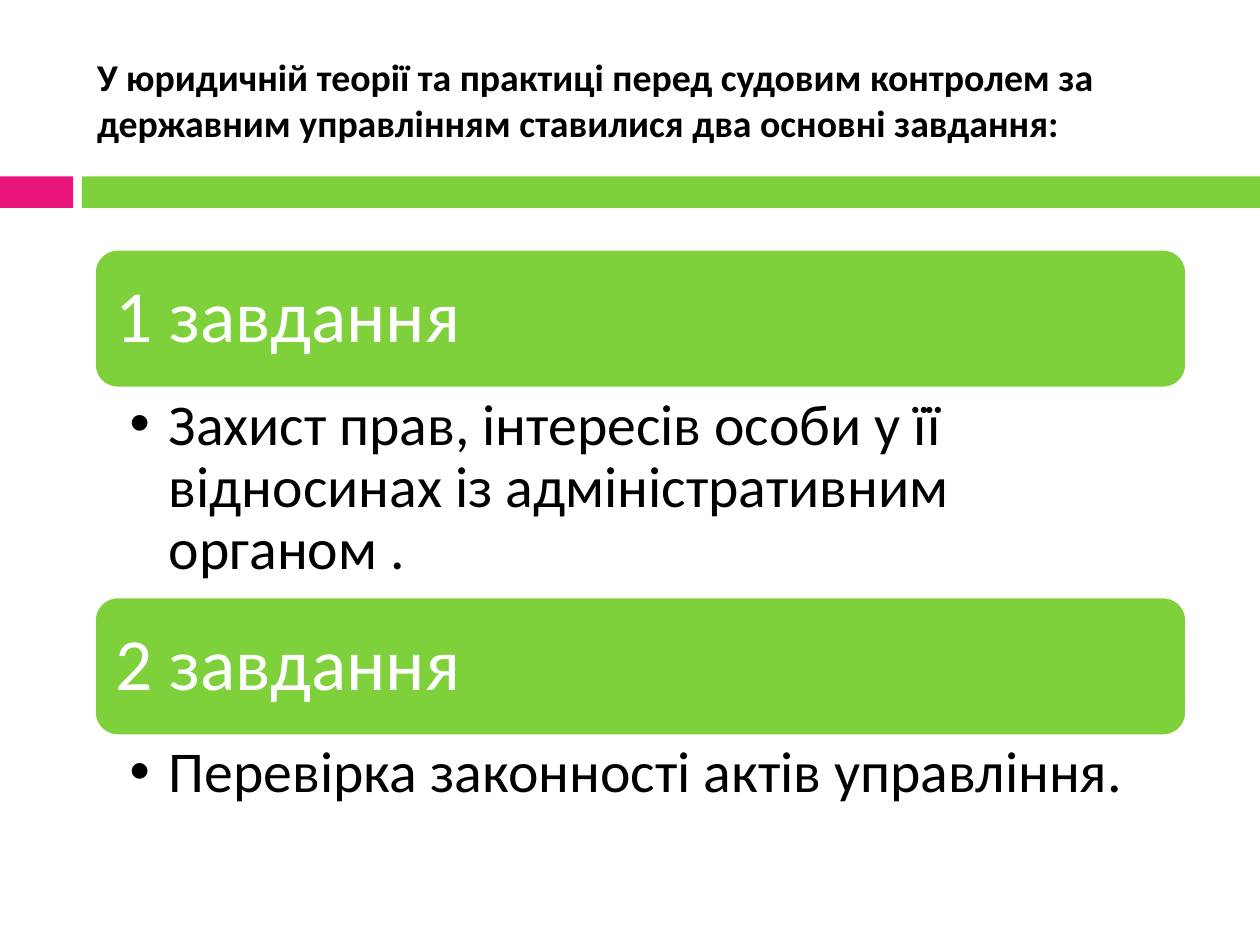
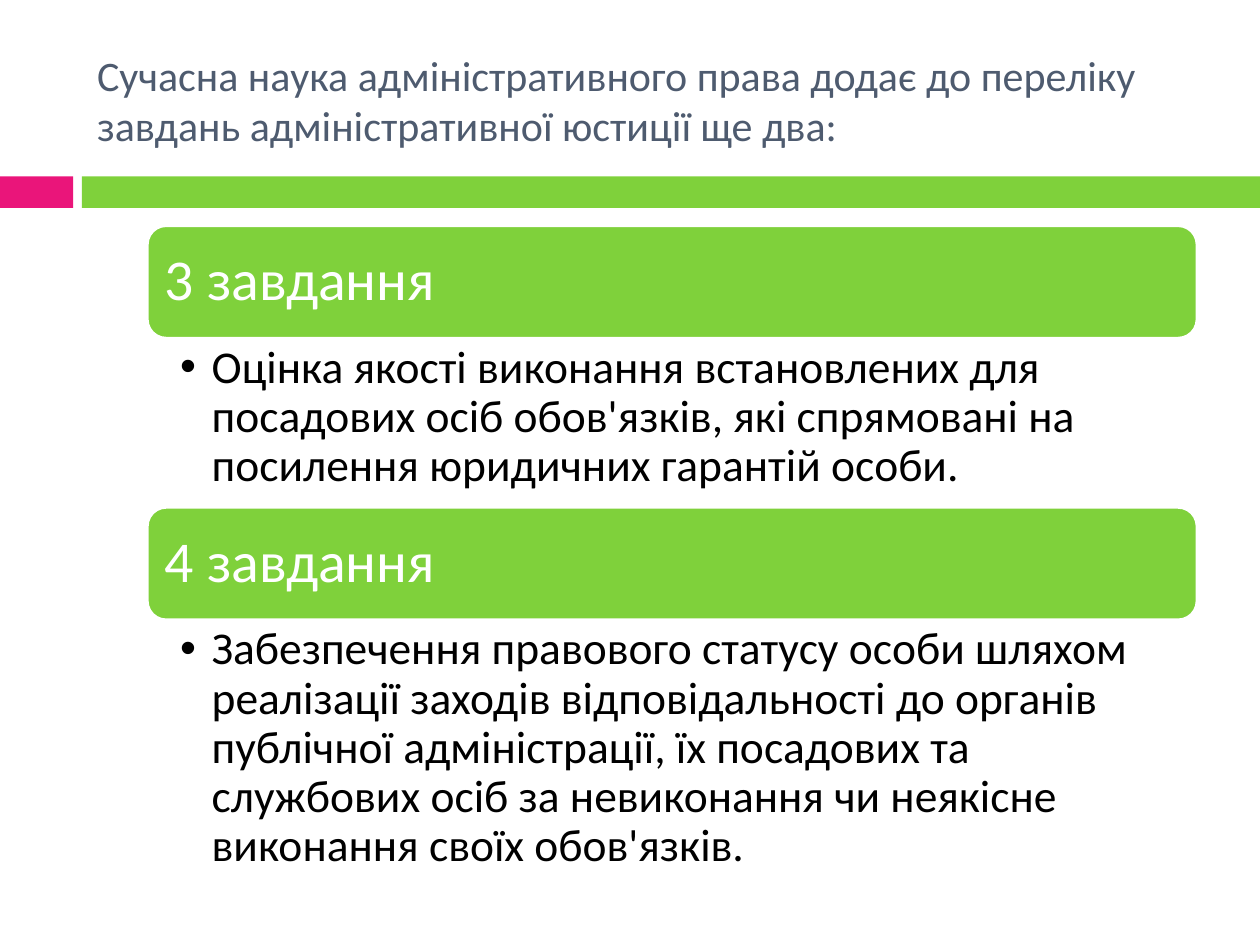
from lxml import etree
from pptx import Presentation
from pptx.dml.color import RGBColor
from pptx.enum import shapes, text
from pptx.oxml.ns import qn
from pptx.util import Pt

FONT = "Calibri"
GREEN, PINK, WHITE, BLACK, SLATE = "7FD13B", "EA157A", "FFFFFF", "000000", "4E5B6F"
SLIDE_WIDTH, SLIDE_HEIGHT = 720, 540
TITLE_BOX = (48.25, 18, 642.25, 77.75)
BAND_TOP, BAND_HEIGHT = 100.8, 18
BANDS = [(0, 41.75, PINK), (46.8, 673.2, GREEN)]
# Share of a rounded box's height by which its corners already push text inwards
CORNER_INSET = 0.05

SLIDES = [
    {
        "title": "У юридичній теорії та практиці перед судовим контролем за "
                 "державним управлінням ставилися два основні завдання:",
        "title_font": {"size": Pt(21.6), "bold": True}, "title_color": BLACK,
        "box": (54, 142.5, 624),
        "style": {"header_height": 79.2, "header_size": 42, "header_inset": 12.25,
                  "body_size": 33, "body_insets": (20, 4.2, 23.5, 4.2), "indent": 22.5},
        "tasks": [
            ("1 завдання", 119.5,
             "Захист прав, інтересів особи у її відносинах із адміністративним органом ."),
            ("2 завдання", 54.75, "Перевірка законності актів управління."),
        ],
    },
    {
        "title": "Сучасна наука адміністративного права додає до переліку "
                 "завдань адміністративної юстиції ще два:",
        "title_font": {"size": Pt(24), "bold": False}, "title_color": SLATE,
        "box": (84.25, 129, 599.75),
        "style": {"header_height": 64.2, "header_size": 33, "header_inset": 10,
                  "body_size": 26, "body_insets": (18.75, 3.4, 18.75, 3.4), "indent": 18},
        "tasks": [
            ("3 завдання", 96.75,
             "Оцінка якості виконання встановлених для посадових осіб обов'язків, "
             "які спрямовані на посилення юридичних гарантій особи."),
            ("4 завдання", 153.4,
             "Забезпечення правового статусу особи шляхом реалізації заходів "
             "відповідальності до органів публічної адміністрації, їх посадових та "
             "службових осіб за невиконання чи неякісне виконання своїх обов'язків."),
        ],
    },
]


def color(hex_value):
    return RGBColor.from_string(hex_value)


def apply(target, formats):
    for name, value in formats.items():
        setattr(target, name, value)


def write(shape, words, ink, font, insets=None, anchor=text.MSO_ANCHOR.MIDDLE,
          line_spacing=0.9):
    frame = shape.text_frame
    frame.text = words
    apply(frame, {"word_wrap": True, "auto_size": text.MSO_AUTO_SIZE.NONE,
                  "vertical_anchor": anchor})
    if insets:
        sides = ("margin_left", "margin_top", "margin_right", "margin_bottom")
        apply(frame, dict(zip(sides, map(Pt, insets))))
    paragraph = frame.paragraphs[0]
    apply(paragraph, {"alignment": text.PP_ALIGN.LEFT, "line_spacing": line_spacing})
    run_font = paragraph.runs[0].font
    apply(run_font, {"name": FONT, **font})
    run_font.color.rgb = color(ink)
    return paragraph


def add_block(slide, kind, box, fill):
    block = slide.shapes.add_shape(kind, *map(Pt, box))
    block.shadow.inherit = False
    block.fill.solid()
    block.fill.fore_color.rgb = color(fill)
    block.line.fill.background()
    return block


def add_bullet(paragraph, indent):
    properties = paragraph._p.get_or_add_pPr()
    properties.set("marL", str(Pt(indent)))
    properties.set("indent", str(-Pt(indent)))
    etree.SubElement(properties, qn("a:buFont")).set("typeface", "Arial")
    etree.SubElement(properties, qn("a:buChar")).set("char", "•")


def move_bands_to_layout(slide):
    """Draw the two-colour band once, on the layout that all slides share."""
    for left, width, fill in BANDS:
        band = add_block(slide, shapes.MSO_SHAPE.RECTANGLE,
                         (left, BAND_TOP, width, BAND_HEIGHT), fill)
        slide.slide_layout.shapes.element.append(band.element)


def add_title(slide, box, words, font, ink):
    title = slide.shapes.title
    apply(title, dict(zip(("left", "top", "width", "height"), map(Pt, box))))
    write(title, words, ink, font, line_spacing=1.0)


def add_task_list(slide, box, tasks, style):
    left, top, width = box
    header_height = style["header_height"]
    for heading, body_height, description in tasks:
        # Rounded heading
        header = add_block(slide, shapes.MSO_SHAPE.ROUNDED_RECTANGLE,
                           (left, top, width, header_height), GREEN)
        header.line.color.rgb = color(WHITE)
        header.line.width = Pt(1.5)
        inset = style["header_inset"] - CORNER_INSET * header_height
        write(header, heading, WHITE, {"size": Pt(style["header_size"])}, [inset] * 4)
        top += header_height

        # Bulleted description
        body = slide.shapes.add_textbox(*map(Pt, (left, top, width, body_height)))
        paragraph = write(body, description, BLACK, {"size": Pt(style["body_size"])},
                          style["body_insets"], text.MSO_ANCHOR.TOP)
        add_bullet(paragraph, style["indent"])
        top += body_height


def main():
    deck = Presentation()
    deck.slide_width, deck.slide_height = Pt(SLIDE_WIDTH), Pt(SLIDE_HEIGHT)
    title_only = deck.slide_layouts[5]
    for number, content in enumerate(SLIDES):
        slide = deck.slides.add_slide(title_only)
        if number == 0:
            move_bands_to_layout(slide)
        add_title(slide, TITLE_BOX, content["title"], content["title_font"],
                  content["title_color"])
        add_task_list(slide, content["box"], content["tasks"], content["style"])
    deck.save("out.pptx")


if __name__ == "__main__":
    main()
